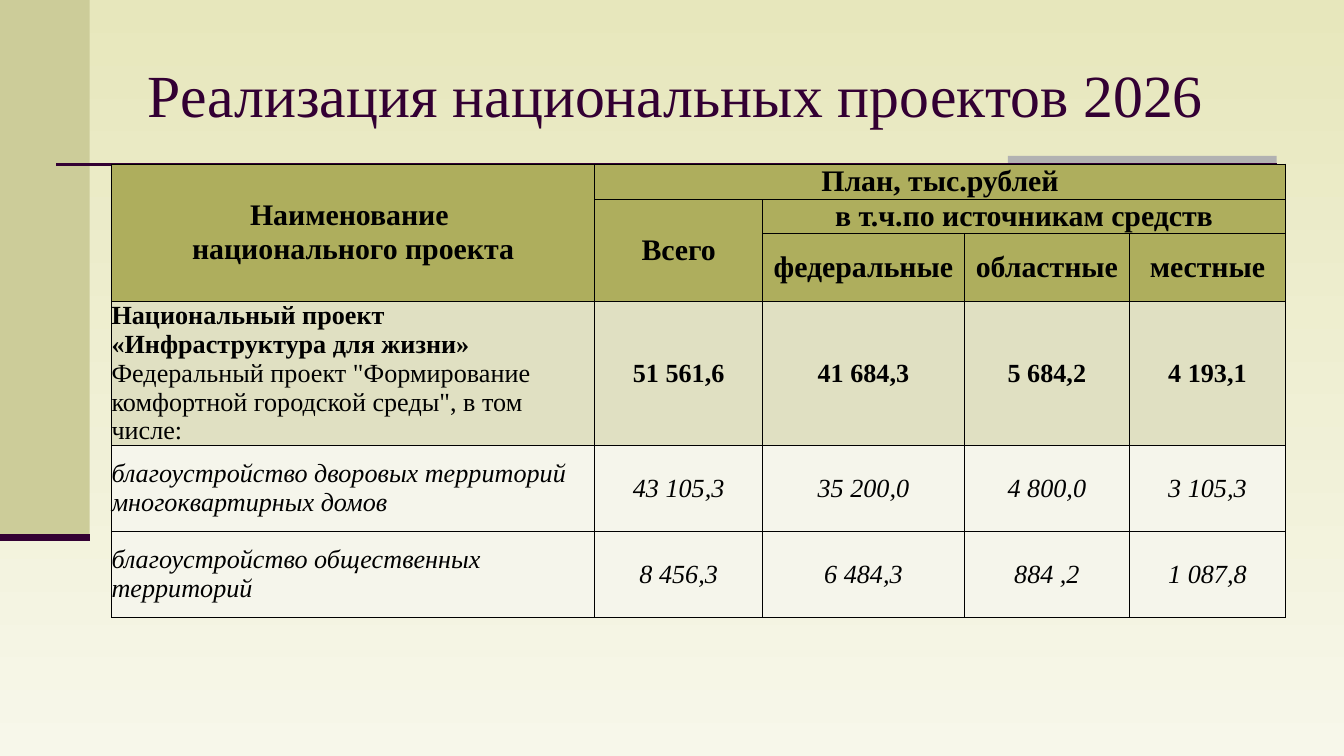
from dataclasses import dataclass

from lxml import etree
from pptx import Presentation
from pptx.dml.color import RGBColor
from pptx.enum.shapes import MSO_CONNECTOR, MSO_SHAPE
from pptx.enum.text import MSO_ANCHOR, PP_ALIGN
from pptx.oxml import parse_xml
from pptx.oxml.ns import nsdecls, qn
from pptx.util import Emu, Inches, Pt

LEFT, CENTER = PP_ALIGN.LEFT, PP_ALIGN.CENTER
MIDDLE = MSO_ANCHOR.MIDDLE
RECTANGLE = MSO_SHAPE.RECTANGLE
STRAIGHT = MSO_CONNECTOR.STRAIGHT

FONT = "Times New Roman"
COLORS = {
    "sky": "E7E7BC",
    "ground": "F7F7EA",
    "olive": "CCCC99",
    "gray": "B2B2B2",
    "plum": "330033",
    "ink": "000000",
    "header": "AEAE5D",
    "project": "E0E0C2",
    "detail": "F5F5EB",
}

WIDTH = Inches(10)
HEIGHT = Emu(WIDTH * 9 // 16)
UNIT = WIDTH / 100  # the slide is a grid of 100 columns with square units
COLUMN_UNITS = [35.95, 12.5, 15, 12.3, 11.6]
ROW_UNITS = [2.65, 2.55, 5, 10.7, 6.4, 6.4]


@dataclass
class Span:
    text: str
    bold: bool = False
    italic: bool = False


@dataclass
class Bar:
    left: float
    top: float
    width: float
    height: float
    color: str


@dataclass
class Rule:
    left: float
    right: float
    top: float
    weight: float
    color: str = "plum"


@dataclass
class Heading:
    row: int
    column: int
    lines: list[str]
    rows: int = 1
    columns: int = 1


@dataclass
class Record:
    name: list[Span]
    values: list[str]
    fill: str
    bold: bool = False
    italic: bool = False


BARS = [Bar(0, 0, 6.67, 40, "olive"), Bar(75, 11.6, 20, 1.5, "gray")]
RULES = [Rule(4.2, 95, 12.25, 1.5), Rule(0, 6.67, 40, 3.5)]
HEADINGS = [
    Heading(0, 0, ["Наименование ", "национального проекта"], rows=3),
    Heading(0, 1, ["План, тыс.рублей"], columns=4),
    Heading(1, 1, ["Всего"], rows=2),
    Heading(1, 2, ["в т.ч.по источникам средств"], columns=3),
    Heading(2, 2, ["федеральные"]),
    Heading(2, 3, ["областные"]),
    Heading(2, 4, ["местные"]),
]
RECORDS = [
    Record(
        [
            Span("Национальный проект «Инфраструктура для жизни»", bold=True),
            Span('Федеральный проект "Формирование комфортной городской среды", в том числе:'),
        ],
        ["51 561,6", "41 684,3", "5 684,2", "4 193,1"], "project", bold=True,
    ),
    Record(
        [Span("благоустройство дворовых территорий многоквартирных домов", italic=True)],
        ["43 105,3", "35 200,0", "4 800,0", "3 105,3"], "detail", italic=True,
    ),
    Record(
        [Span("благоустройство общественных территорий", italic=True)],
        ["8 456,3", "6 484,3", "884 ,2", "1 087,8"], "detail", italic=True,
    ),
]


def grid(units: float) -> Emu:
    return Emu(round(units * UNIT))


def rgb(name: str) -> RGBColor:
    return RGBColor.from_string(COLORS[name])


def add_span(paragraph, span: Span, size: float, color: str = "ink") -> None:
    run = paragraph.add_run()
    run.text = span.text
    font = run.font
    font.name, font.size = FONT, Pt(size)
    font.bold, font.italic = span.bold, span.italic
    font.color.rgb = rgb(color)


def paint_background(page) -> None:
    fill = page.background.fill
    fill.gradient()
    fill.gradient_angle = 270
    for stop, name in zip(fill.gradient_stops, ("sky", "ground")):
        stop.color.rgb = rgb(name)


def add_bar(page, bar: Bar) -> None:
    box = page.shapes.add_shape(
        RECTANGLE, grid(bar.left), grid(bar.top), grid(bar.width), grid(bar.height))
    box.shadow.inherit = False
    box.fill.solid()
    box.fill.fore_color.rgb = rgb(bar.color)
    box.line.fill.background()


def add_rule(page, rule: Rule) -> None:
    line = page.shapes.add_connector(
        STRAIGHT, grid(rule.left), grid(rule.top), grid(rule.right), grid(rule.top))
    line.line.color.rgb = rgb(rule.color)
    line.line.width = Pt(rule.weight)
    etree.SubElement(line._element.spPr, qn("a:effectLst"))


def set_title(page, text: str) -> None:
    title = page.shapes.title
    title.left, title.top, title.width, title.height = map(grid, (10, 2.3, 85, 9.4))
    title.text_frame.vertical_anchor = MIDDLE
    title.text_frame.word_wrap = True
    paragraph = title.text_frame.paragraphs[0]
    paragraph.alignment = LEFT
    add_span(paragraph, Span(text), 32, "plum")


def style_cell(cell, fill: str) -> None:
    """Set borders, fill, margins and anchor; borders must precede the fill."""
    properties = cell._tc.get_or_add_tcPr()
    for side in ("lnL", "lnR", "lnT", "lnB"):
        properties.append(parse_xml(
            f'<a:{side} {nsdecls("a")} w="{Pt(0.5)}"><a:solidFill>'
            f'<a:srgbClr val="{COLORS["ink"]}"/></a:solidFill></a:{side}>'))
    cell.fill.solid()
    cell.fill.fore_color.rgb = rgb(fill)
    cell.margin_left = cell.margin_right = cell.margin_top = cell.margin_bottom = 0
    cell.vertical_anchor = MIDDLE


def write_heading(table, heading: Heading) -> None:
    cell = table.cell(heading.row, heading.column)
    if heading.rows > 1 or heading.columns > 1:
        cell.merge(table.cell(heading.row + heading.rows - 1,
                              heading.column + heading.columns - 1))
    paragraph = cell.text_frame.paragraphs[0]
    paragraph.alignment = CENTER
    for index, line in enumerate(heading.lines):
        if index:
            paragraph.add_line_break()
        add_span(paragraph, Span(line, bold=True), 16)


def write_record(table, row: int, record: Record) -> None:
    frame = table.cell(row, 0).text_frame
    for index, span in enumerate(record.name):
        paragraph = frame.add_paragraph() if index else frame.paragraphs[0]
        paragraph.alignment = LEFT
        add_span(paragraph, span, 14)
    for column, value in enumerate(record.values, 1):
        paragraph = table.cell(row, column).text_frame.paragraphs[0]
        paragraph.alignment = CENTER
        add_span(paragraph, Span(value, record.bold, record.italic), 14)


def add_budget_table(page) -> None:
    table = page.shapes.add_table(
        len(ROW_UNITS), len(COLUMN_UNITS), grid(8.3), grid(12.2),
        grid(sum(COLUMN_UNITS)), grid(sum(ROW_UNITS))).table
    table.first_row = table.horz_banding = False
    for column, units in zip(table.columns, COLUMN_UNITS):
        column.width = grid(units)
    fills = ["header"] * 3 + [record.fill for record in RECORDS]
    for row, units, fill in zip(table.rows, ROW_UNITS, fills):
        row.height = grid(units)
        for cell in row.cells:
            style_cell(cell, fill)
    for heading in HEADINGS:
        write_heading(table, heading)
    for row, record in enumerate(RECORDS, 3):
        write_record(table, row, record)


def main() -> None:
    deck = Presentation()
    deck.slide_width, deck.slide_height = WIDTH, HEIGHT
    page = deck.slides.add_slide(deck.slide_layouts[5])
    paint_background(page)
    for bar in BARS:
        add_bar(page, bar)
    for rule in RULES:
        add_rule(page, rule)
    set_title(page, "Реализация национальных проектов 2026")
    add_budget_table(page)
    deck.save("out.pptx")


if __name__ == "__main__":
    main()
